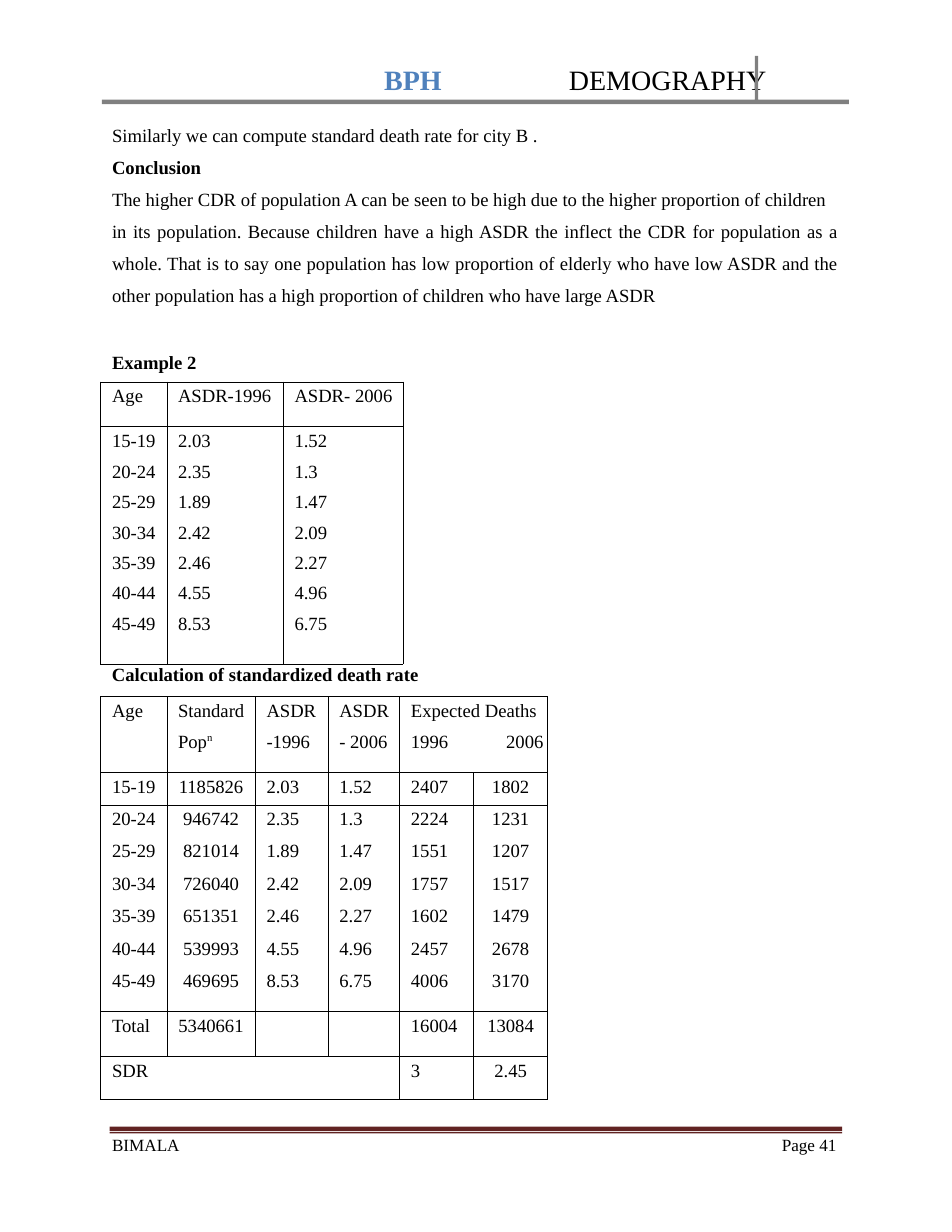
from dataclasses import dataclass
from pptx import Presentation, util as u
from pptx.dml.color import RGBColor
from pptx.enum import text
from pptx.oxml.ns import qn
from lxml import etree

Inches, Pt = u.Inches, u.Pt


@dataclass
class Theme:
    font: str = "Times New Roman"
    ink: str = "000000"
    blue: str = "4F81BC"
    gray: str = "808080"
    wine: str = "612322"
    head: float = 18
    body: float = 12
    foot: float = 11
    line: float = 0.5


T = Theme()
LEFT, MID, RIGHT, JUST = (text.PP_ALIGN.LEFT, text.PP_ALIGN.CENTER,
                          text.PP_ALIGN.RIGHT, text.PP_ALIGN.JUSTIFY)
AGES = ["15-19", "20-24", "25-29", "30-34", "35-39", "40-44", "45-49"]
OLD = ["2.03", "2.35", "1.89", "2.42", "2.46", "4.55", "8.53"]
NEW = ["1.52", "1.3", "1.47", "2.09", "2.27", "4.96", "6.75"]
POP = ["1185826", "946742", "821014", "726040", "651351", "539993", "469695"]
DEAD_OLD = ["2407", "2224", "1551", "1757", "1602", "2457", "4006"]
DEAD_NEW = ["1802", "1231", "1207", "1517", "1479", "2678", "3170"]


def add_run(para, words, size=T.body, color=T.ink, bold=False):
    run = para.add_run()
    run.text = words
    font = run.font
    font.name, font.size, font.bold = T.font, Pt(size), bold
    font.color.rgb = RGBColor.from_string(color)
    return run


def add_tab(para, pos):
    tabs = etree.SubElement(para._p.get_or_add_pPr(), qn("a:tabLst"))
    etree.SubElement(tabs, qn("a:tab"), pos=str(Inches(pos)), algn="l")


def set_frame(frame):
    frame.margin_left = frame.margin_right = 0
    frame.margin_top = frame.margin_bottom = 0
    frame.word_wrap = True
    frame.auto_size = text.MSO_AUTO_SIZE.NONE
    frame.vertical_anchor = text.MSO_ANCHOR.TOP


def add_box(slide, box):
    frame = slide.shapes.add_textbox(*map(Inches, box)).text_frame
    set_frame(frame)
    return frame


def next_para(frame, first):
    return frame.paragraphs[0] if first else frame.add_paragraph()


def add_rule(slide, rings, color):
    start = [Inches(n) for n in rings[0][0]]
    pen = slide.shapes.build_freeform(*start, scale=1.0)
    for num, ring in enumerate(rings):
        pts = [(Inches(x), Inches(y)) for x, y in ring]
        if num:
            pen.move_to(*pts[0])
        pen.add_line_segments(pts[1:], close=True)
    shape = pen.convert_to_shape()
    shape.shadow.inherit = False
    shape.fill.solid()
    shape.fill.fore_color.rgb = RGBColor.from_string(color)
    shape.line.fill.background()


def bar(x, y, wide, high):
    return [(x, y), (x + wide, y), (x + wide, y + high), (x, y + high)]


def add_head(slide, box):
    x, y, wide, high = box
    base = y + high - 0.04
    add_rule(slide, [bar(x, base, 5.83, 0.04),
                     [(x + wide, base), (6.77, base), (6.77, y), (6.74, y),
                      (6.74, y + high), (x + wide, y + high)]], T.gray)
    title = slide.shapes.title
    title.left, title.top = Inches(x + 2.52), Inches(y + 0.06)
    title.width, title.height = Inches(3.6), Inches(0.3)
    set_frame(title.text_frame)
    para = title.text_frame.paragraphs[0]
    para.alignment = LEFT
    add_tab(para, 1.65)
    add_run(para, "BPH", T.head, T.blue, True)
    add_run(para, "\tDEMOGRAPHY", T.head)


def add_body(slide, box):
    frame = add_box(slide, box)
    rows = [
        ("Similarly we can compute standard death rate for city B .", False, LEFT, 0),
        ("Conclusion", True, LEFT, 0),
        ("The higher CDR of population A can be seen to be high due to the "
         "higher proportion of children", False, LEFT, 0),
        ("in its population. Because children have a high ASDR the inflect "
         "the CDR for population as a whole. That is to say one population "
         "has low proportion of elderly who have low ASDR and the other "
         "population has a high proportion of children who have large ASDR",
         False, JUST, 0),
        ("Example 2", True, LEFT, 22.5),
    ]
    for num, (words, bold, align, gap) in enumerate(rows):
        para = next_para(frame, num == 0)
        para.alignment = align
        para.line_spacing, para.space_before = Pt(20.57), Pt(gap)
        add_run(para, words, bold=bold)


def add_label(slide, box, words, size, bold=False, align=LEFT, pitch=None):
    para = add_box(slide, box).paragraphs[0]
    para.alignment = align
    if pitch:
        para.line_spacing = Pt(pitch)
    add_run(para, words, size, bold=bold)


def set_edges(cell, sides):
    props = cell._tc.get_or_add_tcPr()
    for num, side in enumerate("LRTB"):
        edge = etree.Element(qn("a:ln" + side), w=str(Pt(T.line)))
        if side in sides:
            fill = etree.SubElement(edge, qn("a:solidFill"))
            etree.SubElement(fill, qn("a:srgbClr"), val=T.ink)
        else:
            etree.SubElement(edge, qn("a:noFill"))
        props.insert(num, edge)


def fill_cell(cell, words, top=0.04, align=LEFT, sides="LRTB"):
    cell.margin_left = cell.margin_right = cell.margin_bottom = 0
    cell.margin_top = Inches(top)
    cell.fill.background()
    set_edges(cell, sides)
    for num, line in enumerate(words.split("\n") if words else []):
        para = next_para(cell.text_frame, num == 0)
        para.alignment = align
        para.space_before = Pt(6.25 if num else 2.8)
        if align == LEFT:
            para._p.get_or_add_pPr().set("marL", str(Inches(0.1)))
        if "\t" in line:
            add_tab(para, 0.85)
        main, mark, power = line.partition("^")
        add_run(para, main)
        if mark:
            add_run(para, power).font._element.set("baseline", "38000")


def add_grid(slide, spot, cols, rows):
    size = map(Inches, (*spot, sum(cols), sum(rows)))
    grid = slide.shapes.add_table(len(rows), len(cols), *size).table
    grid.first_row = grid.horz_banding = False
    for col, wide in zip(grid.columns, cols):
        col.width = Inches(wide)
    for row, high in zip(grid.rows, rows):
        row.height = Inches(high)
    return grid


def add_rates(slide, spot):
    grid = add_grid(slide, spot, [0.59, 1.04, 1.07], [0.4, 2.12])
    heads = ["Age", "ASDR-1996", "ASDR- 2006"]
    for col, (head, vals) in enumerate(zip(heads, [AGES, OLD, NEW])):
        fill_cell(grid.cell(0, col), head)
        fill_cell(grid.cell(1, col), "\n".join(vals))


def add_deaths(slide, spot):
    grid = add_grid(slide, spot, [0.59, 0.79, 0.65, 0.64, 0.66, 0.66],
                    [0.68] + [0.29] * 6 + [0.39, 0.4, 0.39])
    rows = [["Age", "Standard\nPop^n", "ASDR\n-1996", "ASDR\n- 2006",
             "Expected Deaths\n1996\t2006", ""]]
    rows += zip(AGES, POP, OLD, NEW, DEAD_OLD, DEAD_NEW)
    rows += [["Total", "5340661", "", "", "16004", "13084"],
             ["SDR", "", "", "", "3", "2.45"]]
    grid.cell(0, 4).merge(grid.cell(0, 5))
    grid.cell(9, 0).merge(grid.cell(9, 3))
    for num, row in enumerate(rows):
        inner = 2 <= num <= 7
        sides = "LR" + ("" if 3 <= num <= 7 else "T") + ("" if 2 <= num <= 6 else "B")
        for col, words in enumerate(row):
            align = MID if num and col in (1, 5) else LEFT
            fill_cell(grid.cell(num, col), words, 0.03 if inner else 0.04, align, sides)


def add_foot(slide, box):
    x, y, wide, high = box
    add_rule(slide, [bar(x, y + 0.05, wide, 0.01), bar(x, y, wide, 0.04)], T.wine)
    low = y + 0.09
    add_label(slide, (x + 0.02, low, 2.78, high), "BIMALA", T.foot, pitch=11.8)
    add_label(slide, (x + 5.49, low, 1, high), "Page 41", T.foot, align=RIGHT, pitch=11.8)


def main():
    deck = Presentation()
    deck.slide_width, deck.slide_height = Inches(8.5), Inches(11)
    slide = deck.slides.add_slide(deck.slide_layouts[5])
    add_head(slide, (0.91, 0.5, 6.67, 0.43))
    add_body(slide, (1, 1.02, 6.49, 2.33))
    add_rates(slide, (0.9, 3.41))
    add_label(slide, (1, 5.92, 2.77, 0.22), "Calculation of standardized death rate",
              T.body, True)
    add_deaths(slide, (0.9, 6.22))
    add_foot(slide, (0.98, 10.06, 6.54, 0.18))
    deck.save("out.pptx")


if __name__ == "__main__":
    main()
